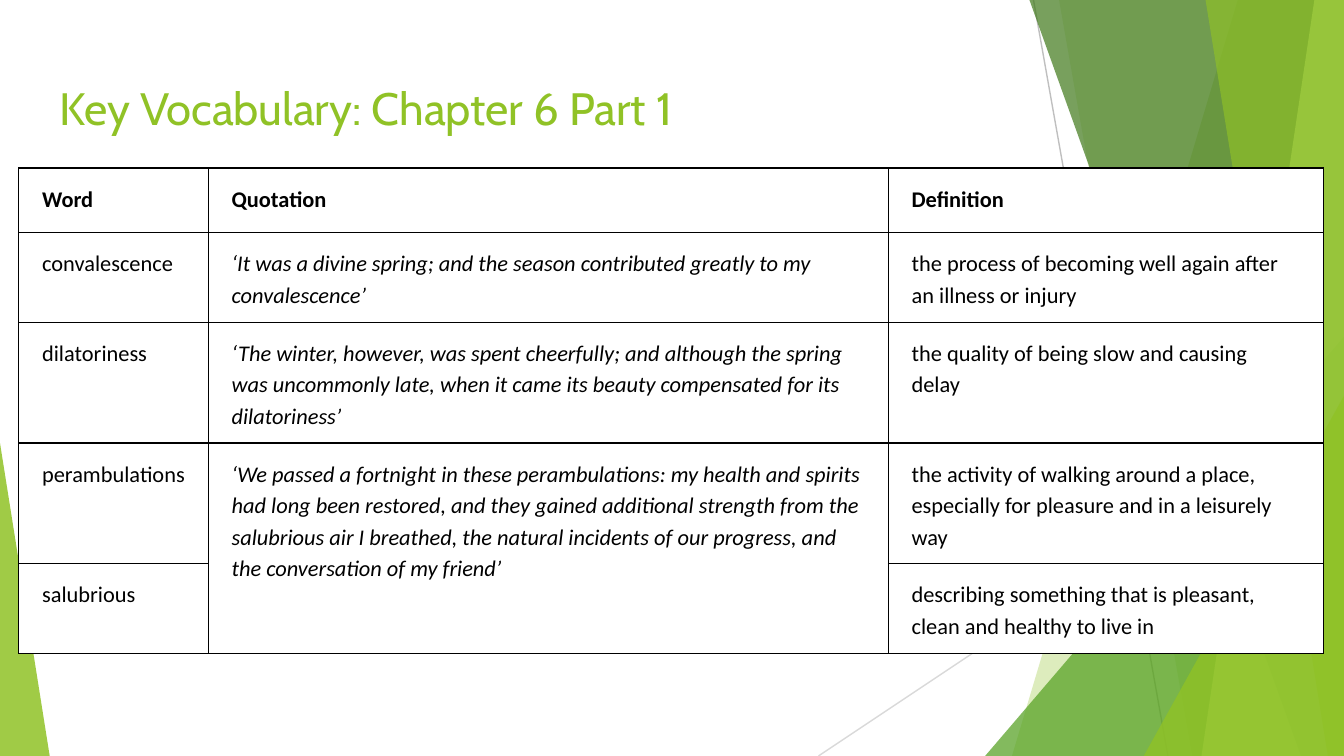
import pptx
import pptx.dml.color
import pptx.enum.shapes
import pptx.enum.text
import pptx.oxml
import pptx.oxml.ns
import pptx.util
from pptx.util import Inches

GREEN = "90C226"
BLACK = "000000"
WHITE = "FFFFFF"
SLIDE_WIDTH = 10
SLIDE_HEIGHT = SLIDE_WIDTH * 9 / 16
MARGIN = pptx.util.Pt(7.5)
INDENT = pptx.util.Pt(5)
COLUMN_WIDTHS = [1.41, 5.06, 3.24]
ROW_HEIGHTS = [0.48, 0.48, 0.72, 0.64, 0.5]
VOCABULARY = [
    ("Word", "Quotation", "Definition"),
    ("convalescence",
     "‘It was a divine spring; and the season contributed greatly to my convalescence’",
     "the process of becoming well again after an illness or injury"),
    ("dilatoriness",
     "‘The winter, however, was spent cheerfully; and although the spring was uncommonly late, "
     "when it came its beauty compensated for its dilatoriness’",
     "the quality of being slow and causing delay"),
    ("perambulations",
     "‘We passed a fortnight in these perambulations: my health and spirits had long been restored, "
     "and they gained additional strength from the salubrious air I breathed, the natural incidents "
     "of our progress, and the conversation of my friend’",
     "the activity of walking around a place, especially for pleasure and in a leisurely way"),
    ("salubrious", "",
     "describing something that is pleasant, clean and healthy to live in"),
]


def paint(color_format, hex_color):
    """Set a colour format to a hex colour."""
    color_format.rgb = pptx.dml.color.RGBColor.from_string(hex_color)


def drawing_element(tag, attributes="", content=""):
    """Make a DrawingML element."""
    namespace = pptx.oxml.ns.nsdecls("a")
    return pptx.oxml.parse_xml(f"<a:{tag} {namespace} {attributes}>{content}</a:{tag}>")


def tint(facet, hex_color, opacity):
    """Give a facet a translucent fill and no outline."""
    facet.shadow.inherit = False
    facet.line.fill.background()
    facet.fill.solid()
    paint(facet.fill.fore_color, hex_color)
    color = facet._element.spPr.find(".//" + pptx.oxml.ns.qn("a:srgbClr"))
    color.append(drawing_element("alpha", f'val="{opacity * 1000}"'))


def add_ray(slide, start, end, hex_color):
    """Draw a thin straight line between two points."""
    ray = slide.shapes.add_connector(
        pptx.enum.shapes.MSO_CONNECTOR.STRAIGHT, *map(Inches, start + end))
    paint(ray.line.color, hex_color)
    ray.line.width = pptx.util.Pt(0.75)
    ray._element.spPr.append(drawing_element("effectLst"))


def add_band(slide, box, top_x, bottom_x, hex_color, opacity):
    """Draw a band from a slanted left edge to the right edge of the box."""
    left, top, width, height = box
    right, bottom = left + width, top + height
    corners = [(right, top), (right, bottom), (left + bottom_x, bottom)]
    outline = slide.shapes.build_freeform(Inches(left + top_x), Inches(top), 1.0)
    outline.add_line_segments([(Inches(x), Inches(y)) for x, y in corners], close=True)
    tint(outline.convert_to_shape(), hex_color, opacity)


def add_corner(slide, box, width, height, apex, hex_color, opacity):
    """Draw a right triangle in the bottom corner on the side of its apex."""
    left = box[0] + apex * (box[2] - width)
    top = box[1] + box[3] - height
    corner = slide.shapes.add_shape(
        pptx.enum.shapes.MSO_SHAPE.ISOSCELES_TRIANGLE,
        *map(Inches, (left, top, width, height)))
    corner.adjustments[0] = apex
    tint(corner, hex_color, opacity)


def add_facets(slide, box):
    """Draw the green facets along the sides of the box."""
    left, top, width, height = box
    right, bottom = left + width, top + height
    add_ray(slide, (left + 7.69, top), (left + 8.69, bottom), "BFBFBF")
    add_ray(slide, (right, top + 3.02), (left + 6.09, bottom), "D9D9D9")
    add_band(slide, box, 9.21, 7.53, GREEN, 30)
    add_band(slide, box, 7.88, 8.87, GREEN, 20)
    add_corner(slide, box, 2.67, 3.12, 1, "54A021", 72)
    add_band(slide, box, 7.66, 9.68, "3F7819", 70)
    add_band(slide, box, 9.78, 8.94, "C0E474", 70)
    add_band(slide, box, 8.97, 9.88, GREEN, 65)
    add_corner(slide, box, 1.49, 2.68, 1, GREEN, 80)
    add_corner(slide, box, 0.37, 2.33, 0, GREEN, 85)


def add_run(paragraph, text, font_name, size, hex_color):
    """Add a styled run and return its font."""
    run = paragraph.add_run()
    run.text = text
    run.font.name = font_name
    run.font.size = pptx.util.Pt(size)
    paint(run.font.color, hex_color)
    return run.font


def set_margins(holder):
    """Set equal margins on a text frame or a cell."""
    holder.margin_left = holder.margin_right = MARGIN
    holder.margin_top = holder.margin_bottom = MARGIN


def add_title(slide, box, text):
    """Write the slide title."""
    frame = slide.shapes.add_textbox(*map(Inches, box)).text_frame
    frame.word_wrap = True
    frame.vertical_anchor = pptx.enum.text.MSO_ANCHOR.TOP
    set_margins(frame)
    add_run(frame.paragraphs[0], text, "Cabin", 24.3, GREEN)


def style_cell(cell):
    """Give a cell a white fill and thin black borders."""
    set_margins(cell)
    cell.vertical_anchor = pptx.enum.text.MSO_ANCHOR.TOP
    cell.fill.solid()
    paint(cell.fill.fore_color, WHITE)
    properties = cell._tc.get_or_add_tcPr()
    stroke = f'<a:solidFill><a:srgbClr val="{BLACK}"/></a:solidFill>'
    for position, side in enumerate("LRTB"):
        properties.insert(position, drawing_element(f"ln{side}", 'w="9525"', stroke))


def add_vocabulary(slide, box):
    """Build the table of words, quotations and definitions."""
    table = slide.shapes.add_table(
        len(VOCABULARY), len(COLUMN_WIDTHS), *map(Inches, box)).table
    for column, width in zip(table.columns, COLUMN_WIDTHS):
        column.width = Inches(width)
    for row, height in zip(table.rows, ROW_HEIGHTS):
        row.height = Inches(height)
    table.cell(3, 1).merge(table.cell(4, 1))
    for row_index, entry in enumerate(VOCABULARY):
        for column_index, text in enumerate(entry):
            cell = table.cell(row_index, column_index)
            style_cell(cell)
            if cell.is_spanned:
                continue
            paragraph = cell.text_frame.paragraphs[0]
            paragraph.line_spacing = 1.15
            for side in ("marL", "marR"):
                paragraph._p.get_or_add_pPr().set(side, str(INDENT))
            font = add_run(paragraph, text, "Calibri", 12, BLACK)
            font.bold = row_index == 0
            font.italic = row_index > 0 and column_index == 1


def main():
    """Build and save the vocabulary slide."""
    deck = pptx.Presentation()
    deck.slide_width, deck.slide_height = Inches(SLIDE_WIDTH), Inches(SLIDE_HEIGHT)
    slide = deck.slides.add_slide(deck.slide_layouts[6])
    add_facets(slide, (0, 0, SLIDE_WIDTH, SLIDE_HEIGHT))
    add_title(slide, (0.34, 0.49, 9.32, 0.63), "Key Vocabulary: Chapter 6 Part 1")
    add_vocabulary(slide, (0.14, 1.25, sum(COLUMN_WIDTHS), sum(ROW_HEIGHTS)))
    deck.save("out.pptx")


if __name__ == "__main__":
    main()
